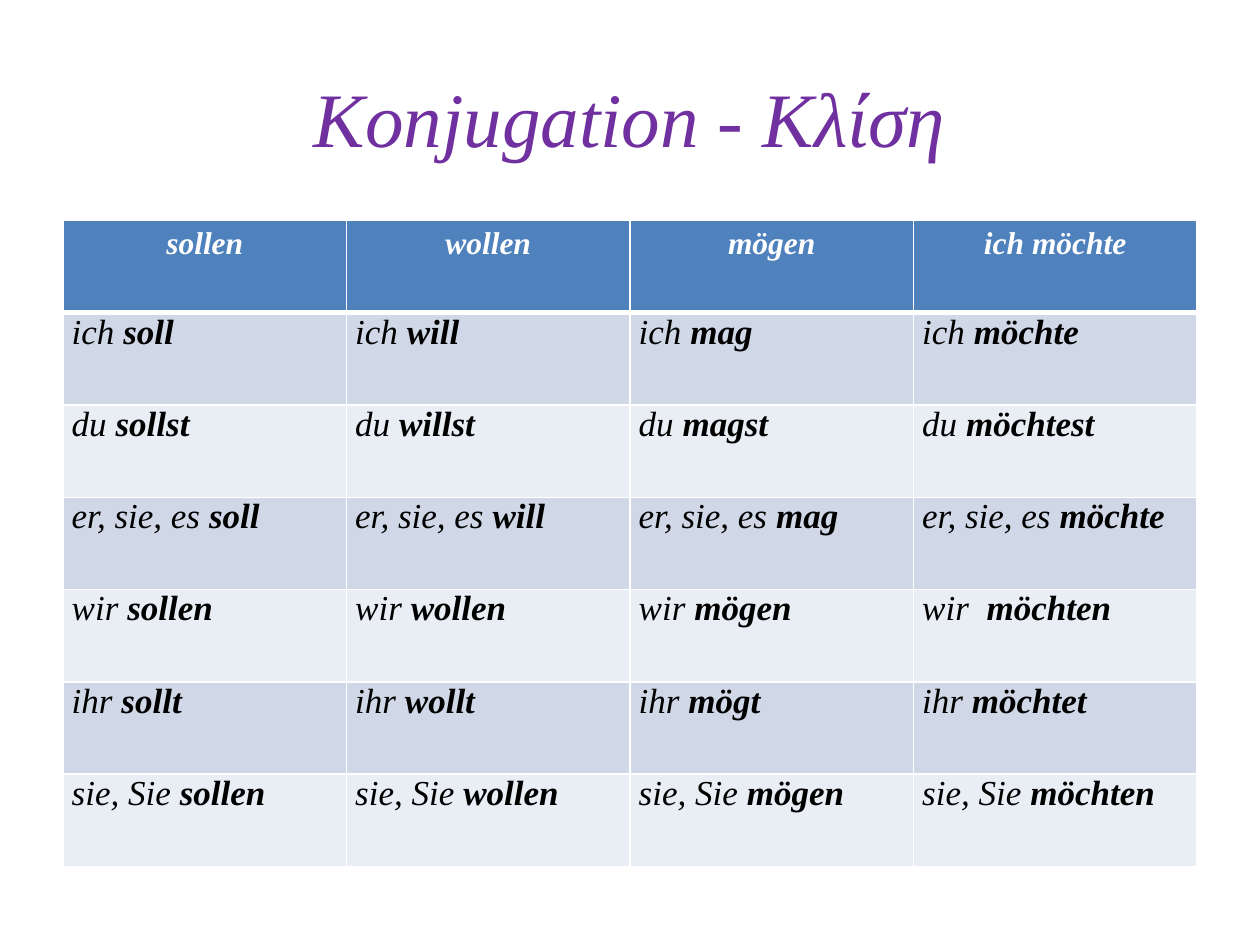
from lxml.etree import SubElement
from pptx import Presentation
from pptx.dml.color import RGBColor as Color
from pptx.enum.text import MSO_ANCHOR as Anchor, PP_ALIGN as Align
from pptx.oxml.ns import qn
from pptx.util import Pt

COLORS = {
    "title": "7030A0",
    "header": "4F81BD",
    "odd": "D0D8E8",
    "even": "E9EDF4",
    "white": "FFFFFF",
    "black": "000000",
}
VERBS = ["sollen", "wollen", "mögen", "ich möchte"]
CONJUGATION = [
    ("ich", ["soll", "will", "mag", "möchte"]),
    ("du", ["sollst", "willst", "magst", "möchtest"]),
    ("er, sie, es", ["soll", "will", "mag", "möchte"]),
    ("wir", ["sollen", "wollen", "mögen", " möchten"]),
    ("ihr", ["sollt", "wollt", "mögt", "möchtet"]),
    ("sie, Sie", ["sollen", "wollen", "mögen", "möchten"]),
]
COLUMN_WIDTH, ROW_HEIGHT = 162, 52.75


class SlideBuilder:
    font_name = "Times New Roman"

    def __init__(self, slide):
        self.slide = slide

    def style_run(self, run, size, color, bold=False):
        font = run.font
        font.name = self.font_name
        font.size = Pt(size)
        font.italic = True
        font.bold = bold
        font.color.rgb = Color.from_string(COLORS[color])

    def title(self, text, left, top, width, height):
        shape = self.slide.shapes.title
        shape.left, shape.top = Pt(left), Pt(top)
        shape.width, shape.height = Pt(width), Pt(height)
        frame = shape.text_frame
        frame.text = text
        frame.vertical_anchor = Anchor.MIDDLE
        paragraph = frame.paragraphs[0]
        paragraph.alignment = Align.CENTER
        self.style_run(paragraph.runs[0], 44, "title")

    def table(self, left, top, verbs, conjugation):
        columns, rows = len(verbs), len(conjugation) + 1
        frame = self.slide.shapes.add_table(
            rows, columns, Pt(left), Pt(top),
            Pt(columns * COLUMN_WIDTH), Pt(rows * ROW_HEIGHT))
        table = frame.table
        for column, verb in enumerate(verbs):
            self.header_cell(table.cell(0, column), verb)
        for row, (pronoun, forms) in enumerate(conjugation, start=1):
            fill = "odd" if row % 2 else "even"
            for column, form in enumerate(forms):
                # The first body row meets the thick rule under the header.
                top_width = 3 if row == 1 else 1
                self.form_cell(table.cell(row, column), pronoun, form, fill, top_width)

    def header_cell(self, cell, verb):
        self.paint_cell(cell, "header", bottom_width=3)
        cell.text_frame.text = verb
        paragraph = cell.text_frame.paragraphs[0]
        paragraph.alignment = Align.CENTER
        self.style_run(paragraph.runs[0], 18, "white", bold=True)

    def form_cell(self, cell, pronoun, form, fill, top_width):
        """Write the pronoun in regular and the verb form in bold italics."""
        self.paint_cell(cell, fill, top_width=top_width)
        cell.margin_left = cell.margin_right = Pt(5)
        cell.margin_top = cell.margin_bottom = 0
        paragraph = cell.text_frame.paragraphs[0]
        for text, bold in ((f"{pronoun} ", False), (form, True)):
            run = paragraph.add_run()
            run.text = text
            self.style_run(run, 20, "black", bold)

    def paint_cell(self, cell, fill, top_width=1, bottom_width=1):
        """Set white borders, then the fill, in the order the schema needs."""
        properties = cell._tc.get_or_add_tcPr()
        widths = {"lnL": 1, "lnR": 1, "lnT": top_width, "lnB": bottom_width}
        for side, width in widths.items():
            line = SubElement(properties, qn(f"a:{side}"), w=str(Pt(width)))
            solid = SubElement(line, qn("a:solidFill"))
            SubElement(solid, qn("a:srgbClr"), val=COLORS["white"])
        cell.fill.solid()
        cell.fill.fore_color.rgb = Color.from_string(COLORS[fill])


def main():
    presentation = Presentation()
    presentation.slide_width, presentation.slide_height = Pt(720), Pt(540)
    title_only = presentation.slide_layouts[5]
    builder = SlideBuilder(presentation.slides.add_slide(title_only))
    builder.title("Konjugation - Κλίση", 36, 21.6, 648, 90)
    builder.table(36, 126, VERBS, CONJUGATION)
    presentation.save("out.pptx")


if __name__ == "__main__":
    main()
